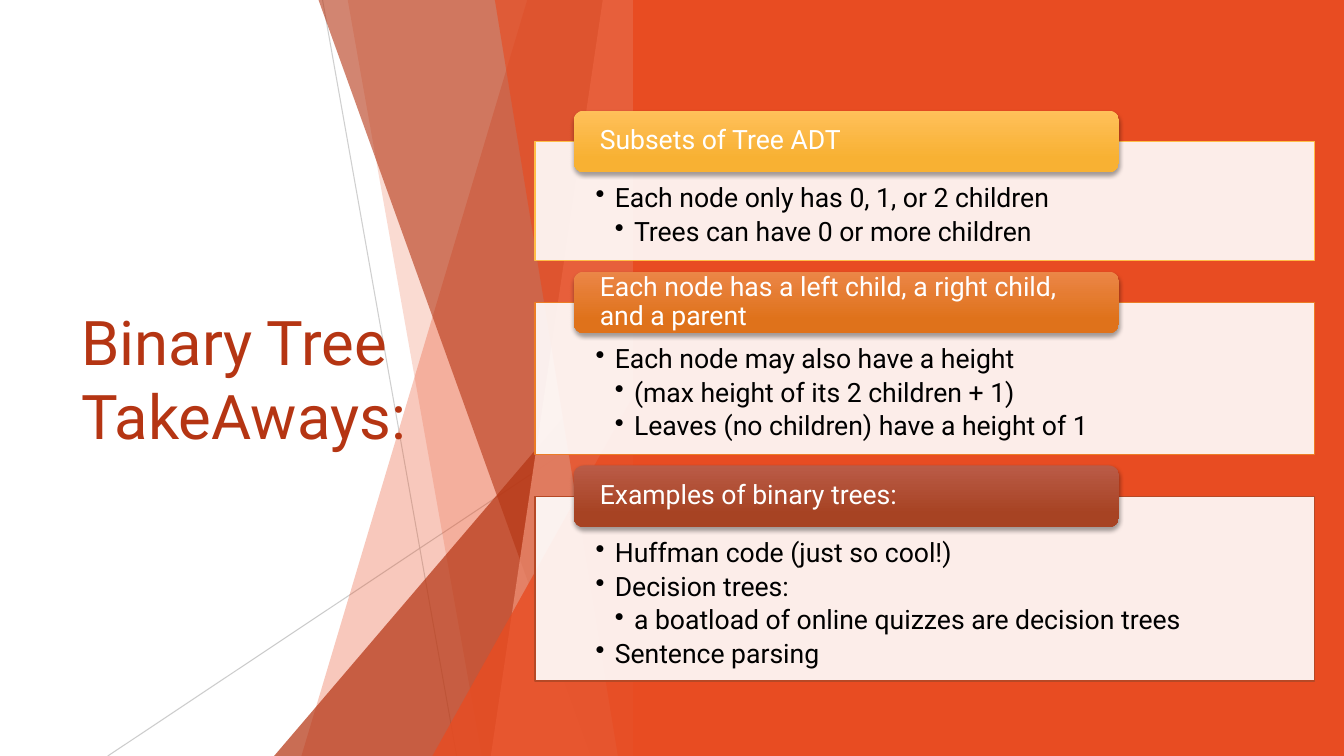
from dataclasses import dataclass

from lxml.etree import SubElement
from pptx import Presentation
from pptx.dml.color import RGBColor
from pptx.enum.shapes import MSO_CONNECTOR as Connector, MSO_SHAPE as Shape
from pptx.enum.text import MSO_ANCHOR as Anchor, MSO_AUTO_SIZE as AutoSize, PP_ALIGN as Align
from pptx.oxml.ns import qn
from pptx.util import Pt

TITLE = "Binary Tree TakeAways:"

# Heading, (indent level, bullet text) list, outline, gradient top, gradient bottom
SECTIONS = [
    ("Subsets of Tree ADT",
     [(1, "Each node only has 0, 1, or 2 children"),
      (2, "Trees can have 0 or more children")],
     "FFBD47", "FFC05A", "F8B133"),
    ("Each node has a left child, a right child, and a parent",
     [(1, "Each node may also have a height"),
      (2, "(max height of its 2 children + 1)"),
      (2, "Leaves (no children) have a height of 1")],
     "EB7D26", "EB8647", "DF721B"),
    ("Examples of binary trees:",
     [(1, "Huffman code (just so cool!)"),
      (1, "Decision trees:"),
      (2, "a boatload of online quizzes are decision trees"),
      (1, "Sentence parsing")],
     "B64926", "BA5B47", "A74323"),
]


@dataclass(frozen=True)
class Theme:
    font: str = "Roboto"
    title_size: int = 44
    text_size: int = 19
    orange: str = "E84C22"
    rust: str = "B53513"
    salmon: str = "F1947A"
    grey: str = "BFBFBF"
    white: str = "FFFFFF"
    black: str = "000000"


theme = Theme()
WIDTH, HEIGHT = 960, 540
EDGE = 452.2  # where the facets meet the orange field

# Start and end points, opacity
RAYS = [((230.4, 0), (326.2, HEIGHT), 75), ((EDGE, 290.2), (77, HEIGHT), 80)]

# Top-left x, top y, bottom-left x, colour, opacity
FACETS = [
    (376.6, 0, 215.3, theme.orange, 30),
    (248.4, 0, 344.2, theme.orange, 20),
    (EDGE, 239.8, 195.8, theme.rust, 72),
    (227.5, 0, 421.9, theme.rust, 60),
    (430.6, 0, 350.6, theme.salmon, 70),
    (353.5, 0, 441.4, theme.orange, 65),
    (EDGE, 283, 308.9, theme.orange, 80),
]

PANEL_LEFT, PANEL_WIDTH, PANEL_TOP, PANEL_GAP = 382.3, 556.6, 101, 30
PANEL_PADDING, LINE_PITCH = 38, 23.5
BAR_LEFT, BAR_WIDTH, BAR_HEIGHT = 409.8, 389.5, 44
INDENT = 13.7


def rgb(colour):
    return RGBColor.from_string(colour)


def paint(fill, colour, opacity=100):
    fill.solid()
    fill.fore_color.rgb = rgb(colour)
    if opacity < 100:
        colour_element = next(fill._xPr.iter(qn("a:srgbClr")))
        SubElement(colour_element, qn("a:alpha"), val=str(opacity * 1000))


def add_ray(slide, start, end, opacity):
    ray = slide.shapes.add_connector(Connector.STRAIGHT, *map(Pt, start + end))
    ray.line.width = Pt(0.75)
    paint(ray.line.fill, theme.grey, opacity)
    SubElement(ray._element.spPr, qn("a:effectLst"))


def add_facet(slide, top_x, top_y, bottom_x, colour, opacity):
    """Draw a sloping band whose right side lies on the orange field's edge."""
    corners = [(EDGE, top_y), (EDGE, HEIGHT), (bottom_x, HEIGHT)]
    builder = slide.shapes.build_freeform(Pt(top_x), Pt(top_y), scale=1.0)
    builder.add_line_segments([(Pt(x), Pt(y)) for x, y in corners])
    facet = builder.convert_to_shape()
    facet.shadow.inherit = False
    paint(facet.fill, colour, opacity)
    facet.line.fill.background()


def add_box(slide, kind, left, top, width, height):
    box = slide.shapes.add_shape(kind, Pt(left), Pt(top), Pt(width), Pt(height))
    box.shadow.inherit = False
    return box


def set_insets(frame, left, top, right, bottom):
    frame.margin_left, frame.margin_top = Pt(left), Pt(top)
    frame.margin_right, frame.margin_bottom = Pt(right), Pt(bottom)


def format_text(paragraph, size, colour):
    paragraph.alignment = Align.LEFT
    for run in paragraph.runs:
        run.font.name = theme.font
        run.font.size = Pt(size)
        run.font.color.rgb = rgb(colour)


def add_panel(slide, top, height, bullets, outline):
    panel = add_box(slide, Shape.RECTANGLE, PANEL_LEFT, top, PANEL_WIDTH, height)
    paint(panel.fill, theme.white, 90)
    paint(panel.line.fill, outline)
    panel.line.width = Pt(1)
    frame = panel.text_frame
    frame.vertical_anchor = Anchor.TOP
    set_insets(frame, 43.2, 31, 43.2, 10.8)
    frame.text = "\n".join(text for _, text in bullets)
    for paragraph, (level, _) in zip(frame.paragraphs, bullets):
        format_text(paragraph, theme.text_size, theme.black)
        paragraph.level = level
        paragraph.line_spacing = 0.9
        paragraph.space_after = Pt(3.5)
        properties = paragraph._p.get_or_add_pPr()
        properties.set("marL", str(Pt(INDENT * level)))
        properties.set("indent", str(-Pt(INDENT)))
        SubElement(properties, qn("a:buChar"), char="•")


def add_heading_bar(slide, middle, heading, gradient_top, gradient_bottom):
    bar = add_box(slide, Shape.ROUNDED_RECTANGLE,
                  BAR_LEFT, middle - BAR_HEIGHT / 2, BAR_WIDTH, BAR_HEIGHT)
    bar.fill.gradient()
    bar.fill.gradient_angle = 270
    stops = zip(bar.fill.gradient_stops, (0, 0.78), (gradient_top, gradient_bottom))
    for stop, position, colour in stops:
        stop.position = position
        stop.color.rgb = rgb(colour)
    bar.line.fill.background()
    effects = bar._element.spPr.find(qn("a:effectLst"))
    shadow = SubElement(effects, qn("a:outerShdw"), blurRad=str(Pt(3)),
                        dist=str(Pt(2)), dir="5400000", rotWithShape="0")
    shadow_colour = SubElement(shadow, qn("a:srgbClr"), val=theme.black)
    SubElement(shadow_colour, qn("a:alpha"), val="35000")
    frame = bar.text_frame
    frame.vertical_anchor = Anchor.MIDDLE
    set_insets(frame, 16.5, 0, 16.5, 0)
    frame.text = heading
    format_text(frame.paragraphs[0], theme.text_size, theme.white)
    frame.paragraphs[0].line_spacing = 0.9


def place_title(slide):
    title = slide.shapes.title
    title.left, title.top, title.width, title.height = map(Pt, (51, 108.7, 279.4, 322.6))
    frame = title.text_frame
    frame.text = TITLE
    frame.word_wrap = True
    frame.auto_size = AutoSize.NONE
    frame.vertical_anchor = Anchor.MIDDLE
    format_text(frame.paragraphs[0], theme.title_size, theme.rust)
    slide.shapes._spTree.append(title._element)  # bring in front of the facets


def main():
    presentation = Presentation()
    presentation.slide_width, presentation.slide_height = Pt(WIDTH), Pt(HEIGHT)
    slide = presentation.slides.add_slide(presentation.slide_layouts[5])

    for ray in RAYS:
        add_ray(slide, *ray)
    for facet in FACETS:
        add_facet(slide, *facet)
    place_title(slide)
    field = add_box(slide, Shape.RECTANGLE, EDGE, 0, WIDTH - EDGE, HEIGHT)
    paint(field.fill, theme.orange)
    field.line.fill.background()

    top = PANEL_TOP
    for heading, bullets, outline, gradient_top, gradient_bottom in SECTIONS:
        height = PANEL_PADDING + LINE_PITCH * len(bullets)
        add_panel(slide, top, height, bullets, outline)
        add_heading_bar(slide, top, heading, gradient_top, gradient_bottom)
        top += height + PANEL_GAP

    presentation.save("out.pptx")


if __name__ == "__main__":
    main()
